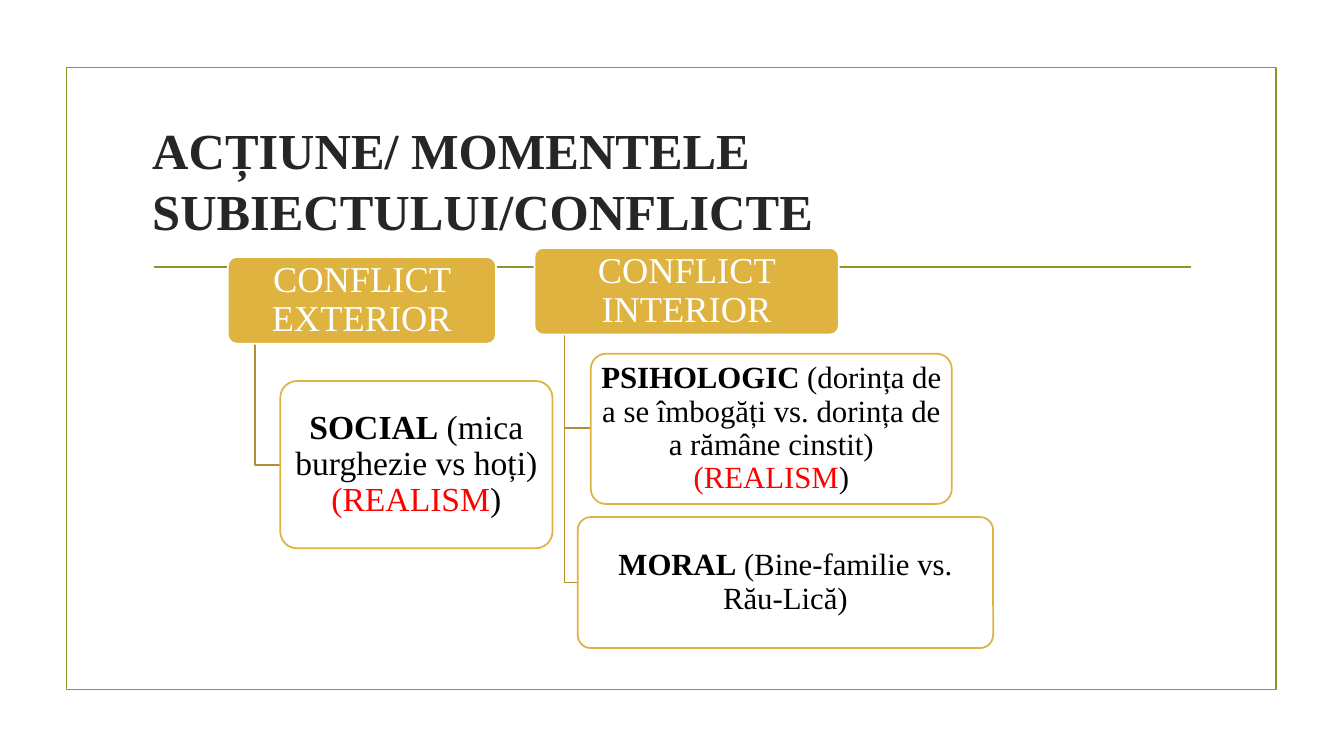
from pptx import Presentation
from pptx.dml.color import RGBColor
from pptx.enum.shapes import MSO_CONNECTOR, MSO_SHAPE
from pptx.enum.text import MSO_ANCHOR, PP_ALIGN
from pptx.util import Inches, Pt
from lxml import etree

RECTANGLE = MSO_SHAPE.RECTANGLE
ROUNDED = MSO_SHAPE.ROUNDED_RECTANGLE
STRAIGHT = MSO_CONNECTOR.STRAIGHT
MIDDLE = MSO_ANCHOR.MIDDLE
LEFT, CENTER = PP_ALIGN.LEFT, PP_ALIGN.CENTER

FONT = "Times New Roman"
LINE_WIDTH = Pt(1.25)
COLORS = {
    "green": "83992A",
    "gold": "DEB340",
    "branch": "B28F33",
    "title": "262626",
    "white": "FFFFFF",
    "black": "000000",
    "red": "FF0000",
}


def color(name):
    return RGBColor.from_string(COLORS[name])


def add_runs(para, runs, size):
    for text, color_name, bold in runs:
        span = para.add_run()
        span.text = text
        span.font.name = FONT
        span.font.size = Pt(size)
        span.font.bold = bold
        span.font.color.rgb = color(color_name)


deck = Presentation()
deck.slide_width, deck.slide_height = Inches(13.33), Inches(7.5)
page = deck.slides.add_slide(deck.slide_layouts[5])

# Frame and rule under the title
frame = page.shapes.add_shape(RECTANGLE, Inches(0.66), Inches(0.67), Inches(12), Inches(6.17))
frame.shadow.inherit = False
frame.fill.background()
frame.line.color.rgb = color("green")
frame.line.width = LINE_WIDTH

rule = page.shapes.add_connector(STRAIGHT, Inches(1.53), Inches(2.65), Inches(11.81), Inches(2.65))
rule.line.color.rgb = color("green")
rule.line.width = LINE_WIDTH
etree.SubElement(
    rule._element.spPr, "{http://schemas.openxmlformats.org/drawingml/2006/main}effectLst")

# Title
title = page.shapes.title
title.left, title.top = Inches(1.41), Inches(1.07)
title.width, title.height = Inches(10.5), Inches(1.43)
title.text_frame.word_wrap = True
title.text_frame.vertical_anchor = MIDDLE
title_para = title.text_frame.paragraphs[0]
title_para.alignment = LEFT
add_runs(title_para, [("ACȚIUNE/ MOMENTELE SUBIECTULUI/CONFLICTE", "title", True)], 36)

# Branches: from the foot of a heading, down, then right to a detail box
branches = [
    (2.53, 3.41, 2.78, 4.61),
    (5.6, 3.32, 5.86, 4.25),
    (5.6, 3.32, 5.73, 5.78),
]
for start_x, start_y, end_x, end_y in branches:
    builder = page.shapes.build_freeform(Inches(start_x), Inches(start_y))
    builder.add_line_segments(
        [(Inches(start_x), Inches(end_y)), (Inches(end_x), Inches(end_y))], close=False)
    branch = builder.convert_to_shape()
    branch.shadow.inherit = False
    branch.fill.background()
    branch.line.color.rgb = color("branch")
    branch.line.width = LINE_WIDTH

# Headings and detail boxes: position, fill, line, text size, runs
realism = [("(REALISM", "red", False), (")", "black", False)]
boxes = [
    ((2.26, 2.55, 2.66, 0.86), "gold", "white", 26, [("CONFLICT EXTERIOR", "white", False)]),
    ((5.3, 2.46, 3.02, 0.86), "gold", "white", 26, [("CONFLICT INTERIOR", "white", False)]),
    ((2.78, 3.78, 2.7, 1.66), "white", "gold", 24,
     [("SOCIAL", "black", True), (" (mica burghezie vs hoți) ", "black", False)] + realism),
    ((5.86, 3.51, 3.58, 1.49), "white", "gold", 22,
     [("PSIHOLOGIC", "black", True),
      (" (dorința de a se îmbogăți vs. dorința de a rămâne cinstit) ", "black", False)] + realism),
    ((5.73, 5.13, 4.12, 1.3), "white", "gold", 22,
     [("MORAL", "black", True), (" (Bine-familie vs. Rău-Lică)", "black", False)]),
]
for place, fill_name, line_name, size, runs in boxes:
    box = page.shapes.add_shape(ROUNDED, *[Inches(length) for length in place])
    box.adjustments[0] = 0.1
    box.shadow.inherit = False
    box.fill.solid()
    box.fill.fore_color.rgb = color(fill_name)
    box.line.color.rgb = color(line_name)
    box.line.width = LINE_WIDTH
    words = box.text_frame
    words.word_wrap = True
    words.vertical_anchor = MIDDLE
    words.margin_left = words.margin_right = Inches(0.05)
    words.margin_top = words.margin_bottom = Inches(0.03)
    para = words.paragraphs[0]
    para.alignment = CENTER
    para.line_spacing = 0.9
    add_runs(para, runs, size)

deck.save("out.pptx")
